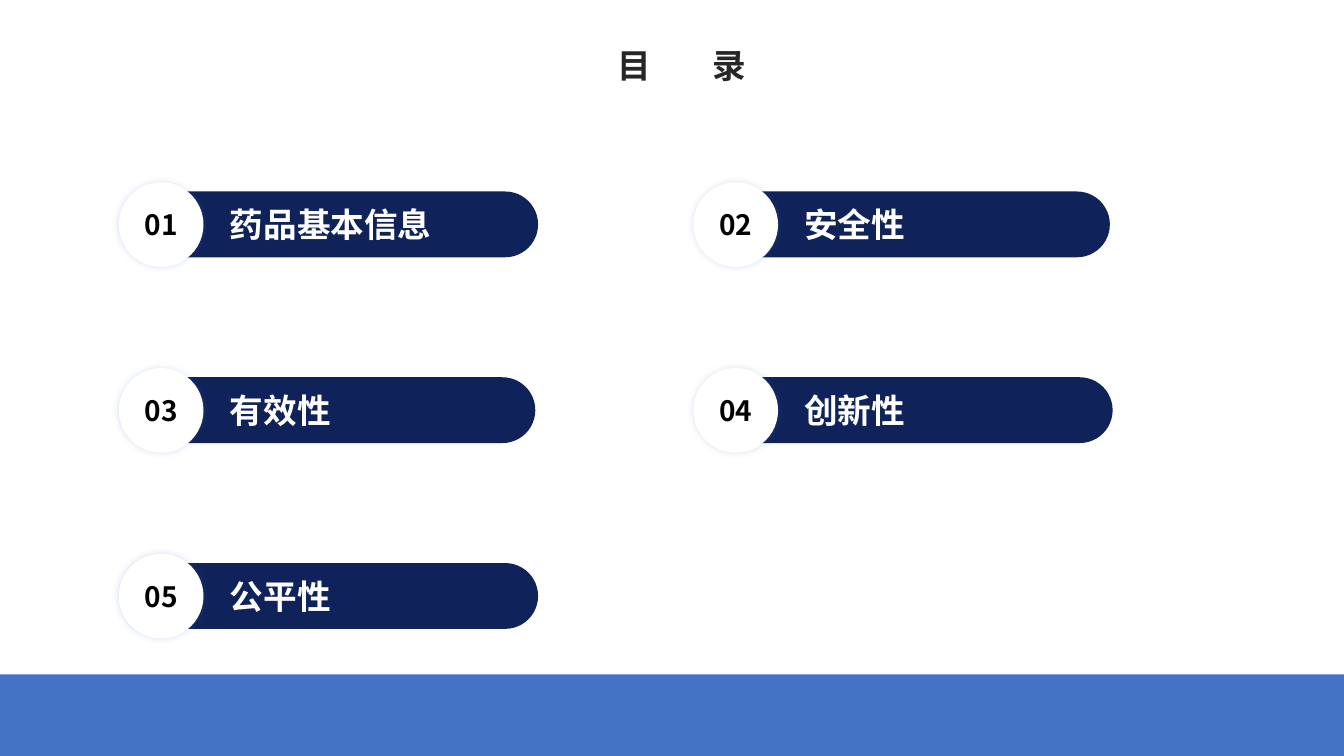
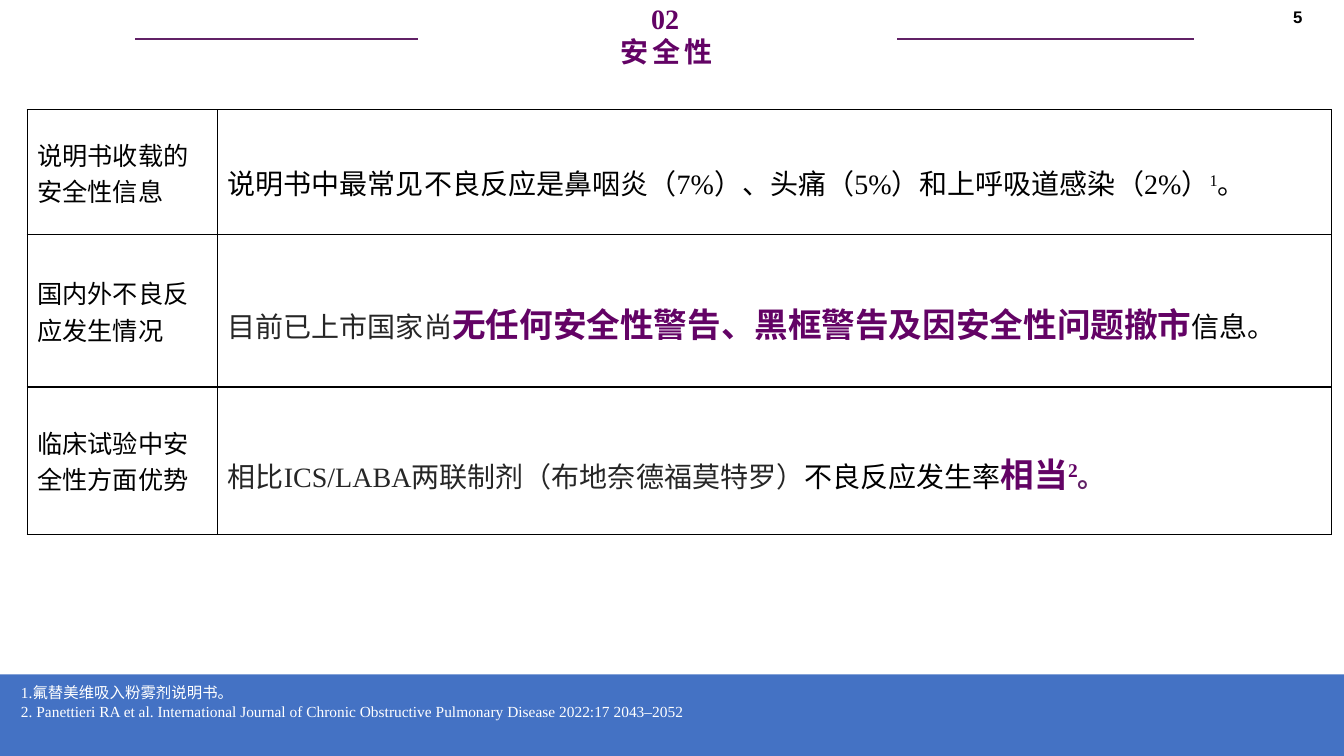
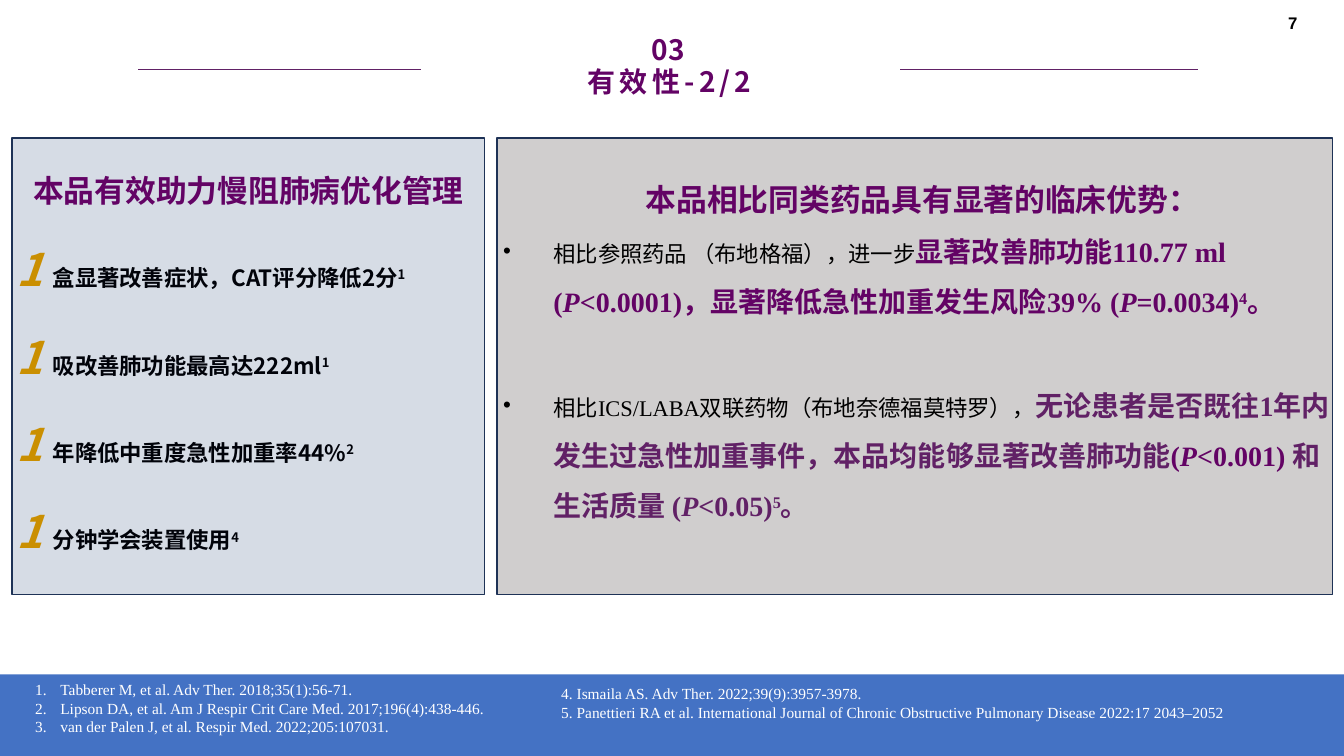
from dataclasses import dataclass
from lxml.etree import SubElement as Sub
from pptx import Presentation
from pptx.dml.color import RGBColor as RGB
from pptx.enum.shapes import MSO_CONNECTOR as Link, MSO_SHAPE as Kind
from pptx.enum.text import MSO_ANCHOR as Anchor, MSO_AUTO_SIZE as Auto, PP_ALIGN as Align
from pptx.oxml.ns import qn
from pptx.util import Pt


@dataclass(frozen=True)
class Theme:
    band: str = "4472C4"
    navy: str = "0F225A"
    white: str = "FFFFFF"
    black: str = "000000"
    ink: str = "01030A"
    dark: str = "262626"
    plum: str = "630365"
    grape: str = "612166"
    gold: str = "CA8F01"
    mist: str = "D6DCE5"
    grey: str = "D0CECE"
    edge: str = "1E3256"
    sans: str = "Noto Sans CJK SC"
    serif: str = "Times New Roman"
    plain: str = "Arial"
    giant: int = 32
    big: int = 24
    head: int = 22
    mid: int = 20
    cell: int = 18
    text: int = 16
    page: int = 12
    note: int = 11


T = Theme()


def style(font, look):
    font.name = look["name"]
    font.size = Pt(look["size"])
    font.bold = look.get("bold", False)
    font.italic = look.get("italic", False)
    font.color.rgb = RGB.from_string(look["color"])
    Sub(font._element, qn("a:ea"), typeface=T.sans)
    for key in ("spc", "baseline"):
        if key in look:
            font._element.set(key, str(look[key]))


def write(frame, rows, look, align=Align.LEFT, line=1, gap=0, anchor=Anchor.TOP,
          inset=None, mark="", lead=0, hang=0):
    frame.word_wrap = True
    frame.auto_size = Auto.NONE
    frame.vertical_anchor = anchor
    if inset:
        frame.margin_left = frame.margin_right = Pt(inset[0])
        frame.margin_top, frame.margin_bottom = Pt(inset[1]), Pt(inset[2])
    for i, row in enumerate(rows):
        par = frame.paragraphs[0] if i == 0 else frame.add_paragraph()
        par.alignment = align
        par.line_spacing = line
        par.space_before = par.space_after = Pt(gap)
        props = par._p.get_or_add_pPr()
        shown = mark if i >= lead else ""
        dent = Pt(hang) if shown else 0
        props.set("marL", str(dent))
        props.set("indent", str(-dent))
        if shown == "1.":
            Sub(props, qn("a:buAutoNum"), type="arabicPeriod")
        elif shown:
            Sub(props, qn("a:buFont"), typeface=T.plain)
            Sub(props, qn("a:buChar"), char=shown)
        else:
            Sub(props, qn("a:buNone"))
        style(par.font, look)
        for text, over in [(row, {})] if isinstance(row, str) else row:
            run = par.add_run()
            run.text = text
            style(run.font, look | over)


prs = Presentation()
prs.slide_width, prs.slide_height = Pt(960), Pt(540)
toc, safe, gain = [prs.slides.add_slide(prs.slide_layouts[n]) for n in (5, 5, 3)]

band = toc.shapes.add_shape(Kind.RECTANGLE, 0, Pt(481.7), Pt(960), Pt(58.3))
band.shadow.inherit = False
band.fill.solid()
band.fill.fore_color.rgb = RGB.from_string(T.band)
band.line.fill.background()
prs.slide_master.shapes.element.insert(2, band._element)

title = {"name": T.sans, "size": T.big, "color": T.dark, "bold": True}
label = title | {"color": T.white}
digit = title | {"size": T.mid, "color": T.black}
num = {"name": T.plain, "size": T.page, "color": T.black, "bold": True}
note = {"name": T.serif, "size": T.note, "color": T.white}
body = {"name": T.serif, "size": T.mid, "color": T.black}
high = {"color": T.plum, "bold": True}
sup = {"baseline": 30000}
slant = {"italic": True}

top = toc.shapes.title
top.left, top.top, top.width, top.height = map(Pt, (80, 28.8, 814.3, 46))
write(top.text_frame, [[("目", {"spc": 4400}), ("录", {})]], title, Align.CENTER)

items = [("药品基本信息", 293), ("安全性", 291), ("有效性", 291), ("创新性", 293), ("公平性", 293)]
for i, (name, wide) in enumerate(items):
    x, y = 91.4 + i % 2 * 410.4, 136.8 + i // 2 * 132.7
    bar = toc.shapes.add_shape(Kind.ROUNDED_RECTANGLE, *map(Pt, (x, y, wide, 47)))
    text = toc.shapes.add_textbox(*map(Pt, (x + 65.7, y + 5.3, 215, 36)))
    disc = toc.shapes.add_shape(Kind.ROUNDED_RECTANGLE, *map(Pt, (x - 6.5, y - 6.6, 60.5, 60.5)))
    for shape, tone in ((bar, T.navy), (disc, T.white)):
        shape.adjustments[0] = 0.5
        shape.shadow.inherit = False
        shape.fill.solid()
        shape.fill.fore_color.rgb = RGB.from_string(tone)
        shape.line.fill.background()
    glow = Sub(disc._element.spPr.find(qn("a:effectLst")), qn("a:outerShdw"),
               blurRad=str(Pt(5)), dist="0", dir="0", algn="ctr", rotWithShape="0")
    tint = Sub(glow, qn("a:srgbClr"), val=T.band)
    Sub(tint, qn("a:alpha"), val="20000")
    write(text.text_frame, [name], label)
    write(disc.text_frame, [f"{i + 1:02}"], digit, Align.CENTER, anchor=Anchor.MIDDLE)

heads = [
    (safe, "02", "安全性", T.serif, 0, 0, "5", 721.4, 1.4),
    (gain, "03", "有效性-2/2", T.sans, 2.2, 21.6, "7", 717.8, 5.8),
]
for slide, part, name, face, dx, dy, page, px, py in heads:
    look = {"name": face, "size": T.mid} | high
    spot = slide.shapes.add_textbox(*map(Pt, (260.6 + dx, dy - 2.2, 429, 31.7)))
    write(spot.text_frame, [part], look, Align.CENTER)
    top = slide.shapes.title
    top.left, top.top, top.width, top.height = map(Pt, (261.6 + dx, 24.5 + dy, 429, 24.5))
    write(top.text_frame, [name], look | {"spc": 300}, Align.CENTER, inset=(0, 0, 0))
    for start, end in ((640.8, 853.2), (96.5, 298.4)):
        rule = slide.shapes.add_connector(
            Link.STRAIGHT, *map(Pt, (start + dx, 28.1 + dy, end + dx, 28.1 + dy)))
        rule.line.color.rgb = RGB.from_string(T.grape)
        rule.line.width = Pt(1.25)
        Sub(rule._element.spPr, qn("a:effectLst"))
    spot = slide.shapes.add_textbox(*map(Pt, (px, py, 216, 28.8)))
    write(spot.text_frame, [page], num, Align.RIGHT)

facts = [
    ("说明书收载的安全性信息", 89.3, [
        ("说明书中最常见不良反应是鼻咽炎（7%）、头痛（5%）和上呼吸道感染（2%）", {}),
        ("1", sup), ("。", {})]),
    ("国内外不良反应发生情况", 108.7, [
        ("目前已上市国家尚", {"color": T.dark}),
        ("无任何安全性警告、黑框警告及因安全性问题撤市", high | {"size": T.big}),
        ("信息。", {})]),
    ("临床试验中安全性方面优势", 105.1, [
        ("相比ICS/LABA两联制剂（布地奈德福莫特罗）", {"color": T.dark}),
        ("不良反应发生率", {}),
        ("相当", high | {"size": T.big}),
        ("2", high | sup | {"size": T.big}),
        ("。", high | {"color": T.grape})]),
]
grid = safe.shapes.add_table(3, 2, *map(Pt, (19.4, 78.5, 931.7, 303.1))).table
grid.first_row = grid.horz_banding = False
grid.columns[0].width, grid.columns[1].width = Pt(136.1), Pt(795.6)
for i, (name, tall, fact) in enumerate(facts):
    grid.rows[i].height = Pt(tall)
    write(grid.cell(i, 0).text_frame, [name], body | {"size": T.cell})
    write(grid.cell(i, 1).text_frame, [fact], body, line=1.5)
for cell in grid.iter_cells():
    cell.vertical_anchor = Anchor.MIDDLE
    for side in ("lnL", "lnR", "lnT", "lnB"):
        edge = Sub(cell._tc.get_or_add_tcPr(), qn(f"a:{side}"), w=str(Pt(1)))
        Sub(Sub(edge, qn("a:solidFill")), qn("a:srgbClr"), val=T.black)
    cell.fill.solid()
    cell.fill.fore_color.rgb = RGB.from_string(T.white)

for x, wide, tone in ((8.6, 337.7, T.mist), (355, 596.9, T.grey)):
    panel = gain.shapes.add_shape(Kind.RECTANGLE, *map(Pt, (x, 98.6, wide, 326.2)))
    panel.shadow.inherit = False
    panel.fill.solid()
    panel.fill.fore_color.rgb = RGB.from_string(tone)
    panel.line.color.rgb = RGB.from_string(T.edge)
    panel.line.width = Pt(1)
    gain.shapes.element.insert(2, panel._element)

left, right = gain.placeholders[1], gain.placeholders[2]
left.left, left.top, left.width, left.height = map(Pt, (4.3, 118.8, 346.3, 285.8))
right.left, right.top, right.width, right.height = map(Pt, (359.3, 95, 599, 326.2))

perks = [("盒显著改善症状，CAT评分降低2分", "1"), ("吸改善肺功能最高达222ml", "1"),
         ("年降低中重度急性加重率44%", "2"), ("分钟学会装置使用", "4")]
lines = [[("本品有效助力慢阻肺病优化管理", high | {"name": T.serif, "size": T.head})]]
for name, ref in perks:
    lines.append([("1 ", slant | {"size": T.giant, "color": T.gold}), (name, {}), (ref, sup)])
write(left.text_frame, lines,
      {"name": T.sans, "size": T.text, "color": T.ink, "bold": True}, gap=12)
left.text_frame.paragraphs[0].alignment = Align.CENTER

calm = {"size": T.text, "color": T.black, "bold": False}
soft = {"color": T.grape}
lines = [
    [("本品相比同类药品具有显著的临床优势：", {"size": T.head})],
    [("相比参照药品 （布地格福），进一步", calm), ("显著改善肺功能110.77 ml (", {}),
     ("P", slant), ("<0.0001)，显著降低急性加重发生风险39% (", {}),
     ("P", slant), ("=0.0034)", {}), ("4", sup), ("。", {})],
    [("相比ICS/LABA双联药物（布地奈德福莫特罗），", calm),
     ("无论患者是否既往1年内发生过急性加重事件，本品均能够显著改善肺功能", soft),
     ("(", {}), ("P", slant), ("<0.001) ", {}), ("和生活质量 (", soft),
     ("P", soft | slant), ("<0.05)", soft), ("5", soft | sup), ("。", soft)],
]
write(right.text_frame, lines, body | high, line=1.5, anchor=Anchor.MIDDLE,
      inset=(0, 3.6, 31), mark="•", lead=1, hang=36)
right.text_frame.paragraphs[0].alignment = Align.CENTER
right.text_frame.paragraphs[2].space_before = Pt(38)

paper = ("Panettieri RA et al. International Journal of Chronic Obstructive "
         "Pulmonary Disease 2022:17 2043–2052")
notes = [
    (safe, (7.9, 484.6, 615, 34), ["1.氟替美维吸入粉雾剂说明书。", f"2. {paper}"], ""),
    (gain, (18, 482.4, 375, 47.5), [
        "Tabberer M, et al. Adv Ther. 2018;35(1):56-71.",
        "Lipson DA, et al. Am J Respir Crit Care Med. 2017;196(4):438-446.",
        "van der Palen J, et al. Respir Med. 2022;205:107031."], "1."),
    (gain, (393.8, 485.3, 540, 34),
     ["4. Ismaila AS. Adv Ther. 2022;39(9):3957-3978.", f"5. {paper}"], ""),
]
for slide, place, rows, mark in notes:
    spot = slide.shapes.add_textbox(*map(Pt, place))
    write(spot.text_frame, rows, note, mark=mark, hang=18)

prs.save("out.pptx")
